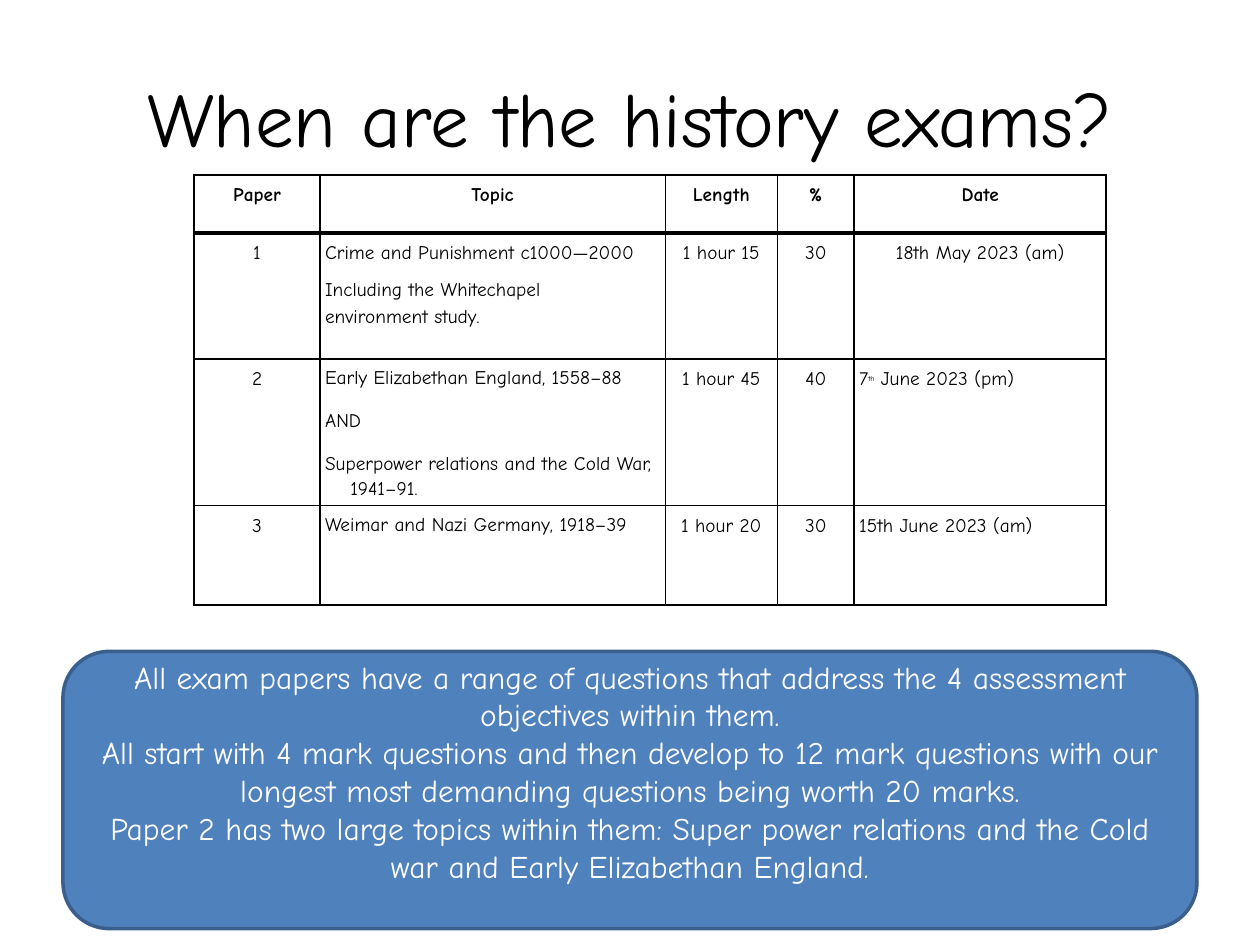
from dataclasses import dataclass

from lxml import etree
from pptx import Presentation
from pptx import util as u
from pptx.dml.color import RGBColor
from pptx.enum import shapes, text
from pptx.oxml import ns

LEFT, CENTER = text.PP_ALIGN.LEFT, text.PP_ALIGN.CENTER


@dataclass(frozen=True)
class Theme:
    font: str = "Comic Neue"
    ink: str = "000000"
    paper: str = "FFFFFF"
    box: str = "4F81BD"
    box_line: str = "3A5F8C"
    title: float = 44
    body: float = 18
    cell: float = 11
    superscript: float = 7.3


THEME = Theme()


def write(tf, lines, size, color=THEME.ink, bold=False, align=CENTER,
          spacing=None, after=None, hanging=0):
    for i, line in enumerate(lines):
        p = tf.paragraphs[0] if i == 0 else tf.add_paragraph()
        p.alignment = align
        p.line_spacing = spacing
        p.space_after = None if after is None else u.Pt(after)
        if hanging:
            pPr = p._p.get_or_add_pPr()
            pPr.set("marL", str(u.Inches(hanging)))
            pPr.set("indent", str(-u.Inches(hanging)))
        for j, row in enumerate(line.split("\n")):
            if j:
                p.add_line_break()
            for k, piece in enumerate(row.split("^")):
                r = p.add_run()
                r.text = piece
                r.font.name = THEME.font
                r.font.size = u.Pt(THEME.superscript if k % 2 else size)
                r.font.bold = bold
                r.font.color.rgb = RGBColor.from_string(color)
                if k % 2:
                    r._r.get_or_add_rPr().set("baseline", "30000")


class Deck:
    def __init__(self, prs, theme):
        self.theme = theme
        self.s = prs.slides.add_slide(prs.slide_layouts[5])

    def title(self, line, x, y, w, h):
        sp = self.s.shapes.title
        sp.left, sp.top, sp.width, sp.height = map(u.Inches, (x, y, w, h))
        sp.text_frame.vertical_anchor = text.MSO_ANCHOR.MIDDLE
        write(sp.text_frame, [line], self.theme.title)

    def box(self, lines, x, y, w, h):
        sp = self.s.shapes.add_shape(
            shapes.MSO_SHAPE.ROUNDED_RECTANGLE, *map(u.Inches, (x, y, w, h)))
        sp.shadow.inherit = False
        sp.fill.solid()
        sp.fill.fore_color.rgb = RGBColor.from_string(self.theme.box)
        sp.line.color.rgb = RGBColor.from_string(self.theme.box_line)
        sp.line.width = u.Pt(2)
        tf = sp.text_frame
        tf.word_wrap = True
        tf.vertical_anchor = text.MSO_ANCHOR.MIDDLE
        tf.margin_bottom = u.Inches(0.35)
        write(tf, lines, self.theme.body, self.theme.paper)

    def border(self, cell, side, width):
        tcPr = cell._tc.get_or_add_tcPr()
        ln = etree.SubElement(tcPr, ns.qn(f"a:ln{side}"), w=str(u.Pt(width)))
        fill = etree.SubElement(ln, ns.qn("a:solidFill"))
        etree.SubElement(fill, ns.qn("a:srgbClr"), val=self.theme.ink)

    def cell(self, cell, lines, top, bottom, **fmt):
        for side, width in (("L", 1), ("R", 1), ("T", top), ("B", bottom)):
            self.border(cell, side, width)
        cell.fill.solid()
        cell.fill.fore_color.rgb = RGBColor.from_string(self.theme.paper)
        cell.margin_left = cell.margin_right = u.Inches(0.04)
        cell.margin_top = cell.margin_bottom = u.Inches(0.04)
        write(cell.text_frame, lines, self.theme.cell, **fmt)

    def table(self, rows, widths, heights, x, y):
        table = self.s.shapes.add_table(
            len(rows), len(widths),
            *map(u.Inches, (x, y, sum(widths), sum(heights)))).table
        table.first_row = table.horz_banding = False
        for column, width in zip(table.columns, widths):
            column.width = u.Inches(width)
        for row, height in zip(table.rows, heights):
            row.height = u.Inches(height)
        for i, row in enumerate(rows):
            for j, lines in enumerate(row):
                topic = j == 1 and i > 0
                loose = topic and i > 1
                dated = j == 4 and i > 1
                self.cell(table.cell(i, j), lines,
                          top=2.25 if i == 1 else 1,
                          bottom=2.25 if i == 0 else 1,
                          bold=i == 0,
                          align=LEFT if topic or dated else CENTER,
                          spacing=1.14 if loose else 1.19,
                          after=10 if loose else 6,
                          hanging=0.2 if loose else 0)


EXAMS = [
    [["Paper"], ["Topic"], ["Length"], ["%"], ["Date"]],
    [["1"],
     ["Crime and Punishment c1000—2000",
      "Including the Whitechapel\nenvironment study."],
     ["1 hour 15"], ["30"], ["18th May 2023 (am)"]],
    [["2"],
     ["Early Elizabethan England, 1558–88", "AND",
      "Superpower relations and the Cold War, 1941–91."],
     ["1 hour 45"], ["40"], ["7^th^ June 2023 (pm)"]],
    [["3"], ["Weimar and Nazi Germany, 1918–39"],
     ["1 hour 20"], ["30"], ["15th June 2023 (am)"]],
]

NOTES = [
    "All exam papers have a range of questions that address the 4 assessment "
    "objectives within them.",
    "All start with 4 mark questions and then develop to 12 mark questions "
    "with our longest most demanding questions being worth 20 marks.",
    "Paper 2 has two large topics within them: Super power relations and the "
    "Cold war and Early Elizabethan England.",
]


def main():
    prs = Presentation()
    prs.slide_width, prs.slide_height = u.Inches(10), u.Inches(7.5)
    deck = Deck(prs, THEME)
    deck.title("When are the history exams?", 0.5, 0.3, 9, 1.25)
    deck.box(NOTES, 0.5, 5.17, 9, 2.2)
    deck.table(EXAMS, [1, 2.74, 0.89, 0.61, 2], [0.46, 1, 1.16, 0.79],
               1.54, 1.39)
    prs.save("out.pptx")


if __name__ == "__main__":
    main()
